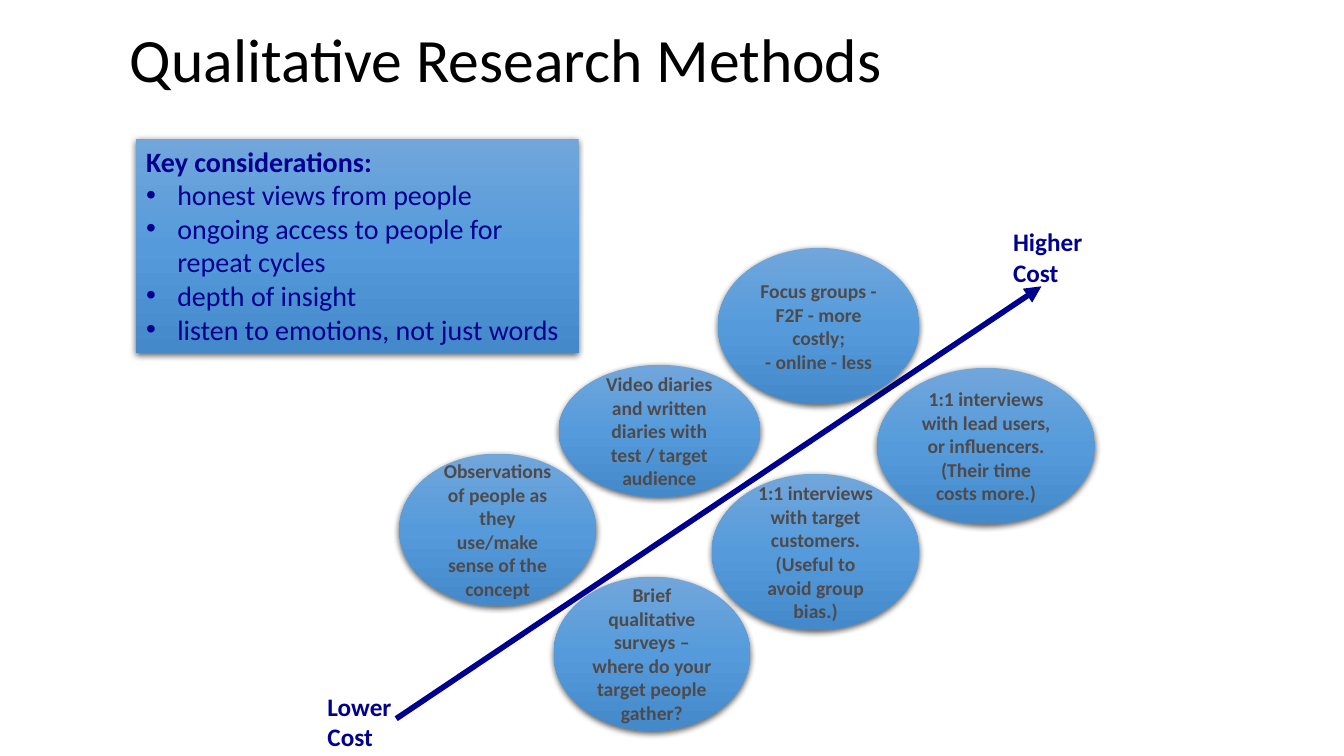
from copy import deepcopy
from lxml import etree
from pptx import Presentation
from pptx import util as u
from pptx.dml.color import RGBColor
from pptx.enum import shapes, text
from pptx.oxml.ns import qn

NAVY = RGBColor(0x00, 0x00, 0x90)
GREY = RGBColor(0x4E, 0x4A, 0x4C)
BLACK = RGBColor(0x00, 0x00, 0x00)
BLUES = [(0, RGBColor(0x71, 0xA6, 0xDB)),
         (0.5, RGBColor(0x55, 0x9B, 0xDB)),
         (1, RGBColor(0x44, 0x8A, 0xCA))]

prs = Presentation()
prs.slide_width, prs.slide_height = u.Inches(13.33), u.Inches(7.5)
COL, ROW = prs.slide_width / 100, prs.slide_height / 100
s = prs.slides.add_slide(prs.slide_layouts[6])


def write(sp, lines, size, color, bold=True, align=None, anchor=text.MSO_ANCHOR.TOP):
    tf = sp.text_frame
    tf.word_wrap = True
    tf.vertical_anchor = anchor
    tf.text = lines
    for p in tf.paragraphs:
        p.alignment = align
        p.font.name, p.font.size, p.font.bold = "Calibri", u.Pt(size), bold
        p.font.color.rgb = color
    return tf.paragraphs


def add_blue(kind, x, y, w, h):
    sp = s.shapes.add_shape(kind, int(x * COL), int(y * ROW), int(w * COL), int(h * ROW))
    sp.fill.gradient()
    sp.fill.gradient_angle = 270
    stops = sp._element.spPr.find(".//" + qn("a:gsLst"))
    stops.append(deepcopy(stops[0]))
    for stop, (pos, color) in zip(sp.fill.gradient_stops, BLUES):
        stop.position, stop.color.rgb = pos, color
    sp.line.fill.background()
    sp.shadow.inherit = False
    shadow = etree.SubElement(sp._element.spPr.find(qn("a:effectLst")), qn("a:outerShdw"),
                              blurRad=str(u.Pt(4.5)), dist=str(u.Pt(1.5)),
                              dir="5400000", algn="ctr", rotWithShape="0")
    black = etree.SubElement(shadow, qn("a:srgbClr"), val="000000")
    etree.SubElement(black, qn("a:alpha"), val="63000")
    return sp


arrow = s.shapes.add_connector(shapes.MSO_CONNECTOR.STRAIGHT, int(29.48 * COL), int(95.07 * ROW),
                               int(77.49 * COL), int(37.87 * ROW))
arrow.line.color.rgb = NAVY
arrow.line.width = u.Pt(4)
etree.SubElement(arrow.line._get_or_add_ln(), qn("a:tailEnd"), type="triangle")
etree.SubElement(arrow._element.spPr, qn("a:effectLst"))

title = s.shapes.add_textbox(int(8.93 * COL), 0, int(67.5 * COL), int(16.67 * ROW))
p = write(title, "Qualitative Research Methods", 44, BLACK, False, anchor=text.MSO_ANCHOR.MIDDLE)[0]
p.line_spacing = 0.9

key = add_blue(shapes.MSO_SHAPE.RECTANGLE, 10.13, 18.4, 32.93, 28.27)
considerations = write(key, "Key considerations:\n"
                            "honest views from people\n"
                            "ongoing access to people for repeat cycles\n"
                            "depth of insight\n"
                            "listen to emotions, not just words",
                       20, NAVY, align=text.PP_ALIGN.LEFT)
for p in considerations[1:]:
    pPr = p._p.get_or_add_pPr()
    pPr.set("marL", str(u.Inches(0.31)))
    pPr.set("indent", str(u.Inches(-0.31)))
    bullet = etree.Element(qn("a:buChar"), char="•")
    pPr.insert(0, bullet)
    bullet.addprevious(etree.Element(qn("a:buFont"), typeface="Arial"))
    p.font.bold = False

METHODS = [
    (41.56, 48.27, 15, 17.47, "Video diaries and written diaries with test / target audience"),
    (29.71, 60, 14.63, 20.13, "Observations of people as they use/make sense of the concept"),
    (52.96, 62.67, 15.45, 20.67,
     "1:1 interviews with target customers. (Useful to avoid group bias.)"),
    (65.27, 48.67, 16.2, 20.67,
     "1:1 interviews with lead users, or influencers. (Their time costs more.)"),
    (53.41, 32.8, 15, 20.67, "Focus groups - F2F - more costly;\n- online - less"),
    (41.19, 76.27, 14.63, 20.4,
     "Brief qualitative surveys – where do your target people gather?"),
]
for x, y, w, h, method in METHODS:
    sp = add_blue(shapes.MSO_SHAPE.OVAL, x, y, w, h)
    write(sp, method, 14, GREY, align=text.PP_ALIGN.CENTER, anchor=text.MSO_ANCHOR.MIDDLE)

for x, y, w, cost in [(23.63, 90.8, 7.2, "Lower Cost"), (74.64, 29.33, 6.83, "Higher\nCost")]:
    sp = s.shapes.add_textbox(int(x * COL), int(y * ROW), int(w * COL), int(9.47 * ROW))
    write(sp, cost, 18, NAVY)

prs.save("out.pptx")
